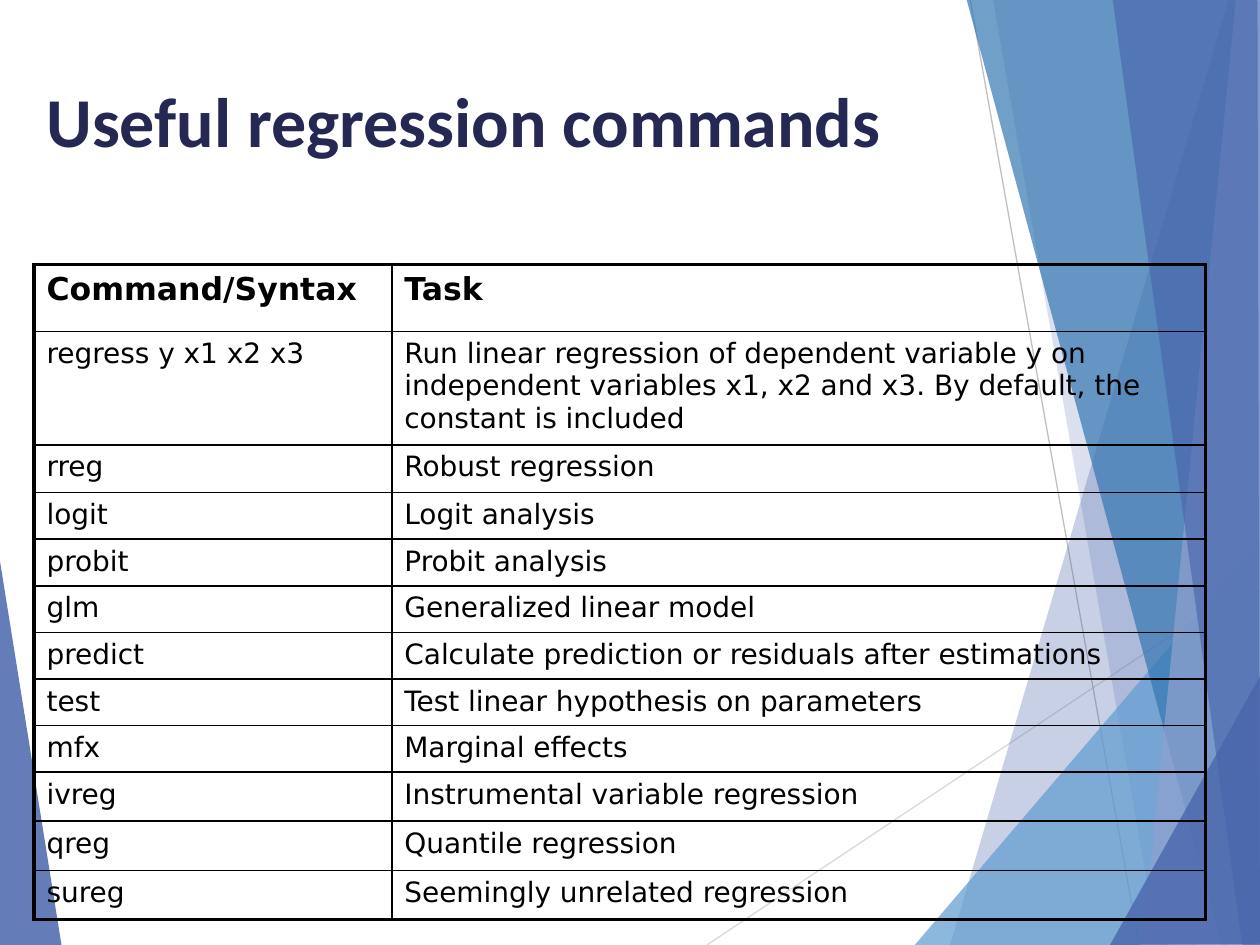
import dataclasses
import typing

import lxml.etree
import pptx
import pptx.dml.color
import pptx.enum.shapes
import pptx.enum.text
import pptx.oxml
import pptx.oxml.ns
import pptx.util

Inches, Pt = pptx.util.Inches, pptx.util.Pt
RGB = pptx.dml.color.RGBColor.from_string
qn = pptx.oxml.ns.qn
Point = tuple[float, float]


@dataclasses.dataclass(frozen=True)
class Theme:
    navy: str = "242852"
    ink: str = "000000"
    blue: str = "4A66AC"
    sky: str = "629DD1"
    ocean: str = "3477B2"
    mist: str = "90A2CF"
    rule: str = "D9D9D9"
    rule_dark: str = "BFBFBF"
    title_font: str = "Calibri"
    table_font: str = "DejaVu Sans"
    title_size: float = 40
    header_size: float = 18
    body_size: float = 16
    thin: float = 1
    thick: float = 2.25
    ray_width: float = 0.75


class Ray(typing.NamedTuple):
    start: Point
    end: Point
    color: str


class Facet(typing.NamedTuple):
    color: str
    opacity: int  # per cent
    points: list[Point]


class Command(typing.NamedTuple):
    syntax: str
    task: str
    height: float


T = Theme()

LEFT_FACET = Facet(T.blue, 85, [(-0.01, 4.39), (0.49, 7.51), (-0.01, 7.5)])
RAYS = [
    Ray((5.61, 7.5), (10.01, 4.57), T.rule),
    Ray((7.7, 0), (9.04, 7.5), T.rule_dark),
]
RIGHT_FACETS = [
    Facet(T.blue, 30, [(9.75, 0), (7.54, 7.5), (10.02, 7.51), (10.01, 0.01)]),
    Facet(T.blue, 20, [(7.88, -0.01), (9.19, 7.5), (10.01, 7.5), (10.01, -0.01)]),
    Facet(T.sky, 72, [(7.26, 7.5), (10, 4.29), (10.01, 7.5)]),
    Facet(T.ocean, 70, [(7.67, -0.01), (9.7, 7.5), (10.01, 7.49), (10.01, -0.01)]),
    Facet(T.mist, 70, [(9.81, -0.01), (9.07, 7.5), (10.01, 7.5), (10, -0.01)]),
    Facet(T.blue, 65, [(8.83, -0.01), (9.86, 7.5), (10, 7.5), (9.98, -0.01)]),
    Facet(T.blue, 80, [(8.81, 7.5), (10.01, 5.35), (10.01, 7.49)]),
]
COLUMN_WIDTHS = (2.84, 6.46)
COMMANDS = [
    Command("Command/Syntax", "Task", 0.53),
    Command("regress y x1 x2 x3",
            "Run linear regression of dependent variable y on independent "
            "variables x1, x2 and x3. By default, the constant is included", 0.9),
    Command("rreg", "Robust regression", 0.38),
    Command("logit", "Logit analysis", 0.37),
    Command("probit", "Probit analysis", 0.37),
    Command("glm", "Generalized linear model", 0.37),
    Command("predict", "Calculate prediction or residuals after estimations", 0.37),
    Command("test", "Test linear hypothesis on parameters", 0.37),
    Command("mfx", "Marginal effects", 0.37),
    Command("ivreg", "Instrumental variable regression", 0.39),
    Command("qreg", "Quantile regression", 0.39),
    Command("sureg", "Seemingly unrelated regression", 0.39),
]


def add_facet(s, facet: Facet) -> None:
    start, *rest = [(Inches(x), Inches(y)) for x, y in facet.points]
    builder = s.shapes.build_freeform(*start)
    builder.add_line_segments(rest, close=True)
    sp = builder.convert_to_shape()
    sp.shadow.inherit = False
    sp.line.fill.background()
    sp.fill.solid()
    sp.fill.fore_color.rgb = RGB(facet.color)
    color = sp.fill._xPr.find(qn("a:solidFill"))[0]
    lxml.etree.SubElement(color, qn("a:alpha"), val=str(facet.opacity * 1000))


def add_ray(s, ray: Ray) -> None:
    line = s.shapes.add_connector(
        pptx.enum.shapes.MSO_CONNECTOR.STRAIGHT,
        *(Inches(v) for v in ray.start + ray.end))
    line.line.color.rgb = RGB(ray.color)
    line.line.width = Pt(T.ray_width)
    lxml.etree.SubElement(line._element.spPr, qn("a:effectLst"))


def add_run(p, text: str, font: str, size: float, color: str, bold: bool) -> None:
    r = p.add_run()
    r.text = text
    r.font.name = font
    r.font.size = Pt(size)
    r.font.bold = bold
    r.font.color.rgb = RGB(color)


def add_title(s, text: str) -> None:
    sp = s.shapes.add_textbox(Inches(0.27), Inches(0.56), Inches(9.29), Inches(0.77))
    tf = sp.text_frame
    tf.word_wrap = True
    tf.vertical_anchor = pptx.enum.text.MSO_ANCHOR.BOTTOM
    add_run(tf.paragraphs[0], text, T.title_font, T.title_size, T.navy, True)


def set_border(cell, side: str, width: float) -> None:
    ln = lxml.etree.SubElement(cell._tc.get_or_add_tcPr(), qn(f"a:ln{side}"),
                               w=str(Pt(width)))
    fill = lxml.etree.SubElement(ln, qn("a:solidFill"))
    lxml.etree.SubElement(fill, qn("a:srgbClr"), val=T.ink)


def add_command_table(s, commands: list[Command]) -> None:
    last_row, last_col = len(commands) - 1, len(COLUMN_WIDTHS) - 1
    frame = s.shapes.add_table(
        len(commands), len(COLUMN_WIDTHS), Inches(0.27), Inches(2.1),
        Inches(sum(COLUMN_WIDTHS)), Inches(sum(c.height for c in commands)))
    table = frame.table
    table.first_row = table.horz_banding = False
    for column, width in zip(table.columns, COLUMN_WIDTHS):
        column.width = Inches(width)
    for i, command in enumerate(commands):
        table.rows[i].height = Inches(command.height)
        size = T.header_size if i == 0 else T.body_size
        for j, text in enumerate((command.syntax, command.task)):
            cell = table.cell(i, j)
            add_run(cell.text_frame.paragraphs[0], text, T.table_font, size,
                    T.ink, i == 0)
            # Only the outer frame is thick
            outer = {"L": j == 0, "R": j == last_col, "T": i == 0, "B": i == last_row}
            for side, is_outer in outer.items():
                set_border(cell, side, T.thick if is_outer else T.thin)
            cell.fill.background()


def main() -> None:
    prs = pptx.Presentation()
    prs.slide_width, prs.slide_height = Inches(10), Inches(7.5)
    s = prs.slides.add_slide(prs.slide_layouts[6])

    # Background facets and rays
    add_facet(s, LEFT_FACET)
    for ray in RAYS:
        add_ray(s, ray)
    for facet in RIGHT_FACETS:
        add_facet(s, facet)

    # Title and table
    add_title(s, "Useful regression commands")
    add_command_table(s, COMMANDS)

    prs.save("out.pptx")


if __name__ == "__main__":
    main()
